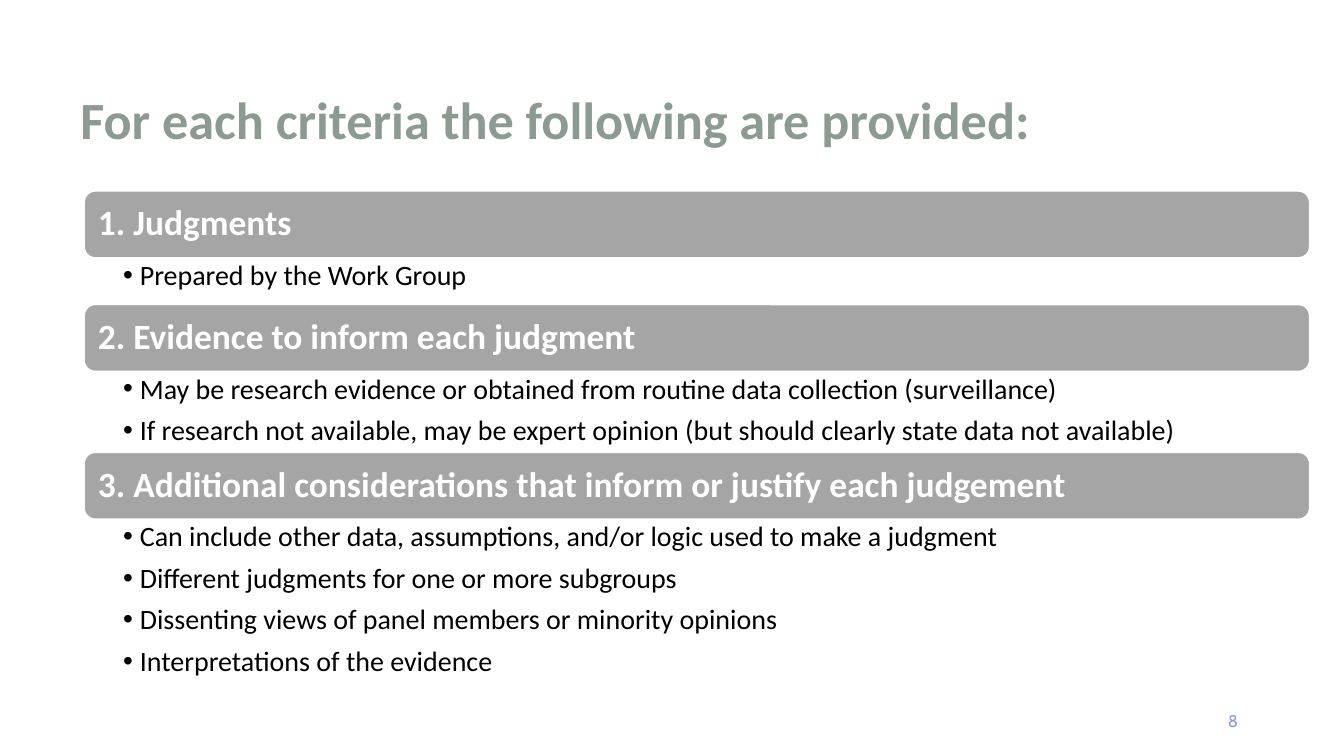
from lxml.etree import SubElement
from pptx import Presentation
from pptx.dml.color import RGBColor
from pptx.enum.shapes import MSO_SHAPE as Shape
from pptx.enum.text import MSO_ANCHOR as Anchor, PP_ALIGN as Align
from pptx.oxml.ns import qn
from pptx.util import Pt

SCALE = 4572
WHITE = RGBColor(0xFF, 0xFF, 0xFF)
BLACK = RGBColor(0, 0, 0)
GRAY = RGBColor(0xA5, 0xA5, 0xA5)
SAGE = RGBColor(0x8B, 0x9B, 0x92)
LILAC = RGBColor(0x8C, 0x9A, 0xE5)

BAR = 100
PARTS = [
    ("1. Judgments", 69, ["Prepared by the Work Group"]),
    ("2. Evidence to inform each judgment", 120, [
        "May be research evidence or obtained from routine data collection (surveillance)",
        "If research not available, may be expert opinion (but should clearly state data not available)",
    ]),
    ("3. Additional considerations that inform or justify each judgement", 246, [
        "Can include other data, assumptions, and/or logic used to make a judgment",
        "Different judgments for one or more subgroups",
        "Dissenting views of panel members or minority opinions",
        "Interpretations of the evidence",
    ]),
]


def px(n):
    return n * SCALE


def frame(shape, anchor, pads=(20, 10, 20, 10)):
    text = shape.text_frame
    text.word_wrap = True
    text.vertical_anchor = anchor
    text.margin_left, text.margin_top, text.margin_right, text.margin_bottom = map(px, pads)
    return text


def textbox(slide, box, anchor, pads=(20, 10, 20, 10)):
    return frame(slide.shapes.add_textbox(*map(px, box)), anchor, pads)


def write(para, words, size, color, bold=False, face="Calibri"):
    run = para.add_run()
    run.text = words
    font = run.font
    font.name, font.size, font.bold = face, Pt(size), bold
    font.color.rgb = color


def space(para):
    para.line_spacing = 0.9
    para.space_after = Pt(6)


def bullet(para):
    props = para._p.get_or_add_pPr()
    props.set("marL", str(px(25)))
    props.set("indent", str(px(-25)))
    SubElement(props, qn("a:buFont")).set("typeface", "Arial")
    SubElement(props, qn("a:buChar")).set("char", "•")


def add_title(slide, box):
    para = textbox(slide, box, Anchor.BOTTOM).paragraphs[0]
    para.line_spacing = Pt(30)
    write(para, "For each criteria the following are provided:", 28, SAGE, True)


def add_bar(slide, box, words):
    bar = slide.shapes.add_shape(Shape.ROUNDED_RECTANGLE, *map(px, box))
    bar.shadow.inherit = False
    bar.fill.solid()
    bar.fill.fore_color.rgb = GRAY
    bar.line.color.rgb = WHITE
    bar.line.width = Pt(1)
    para = frame(bar, Anchor.MIDDLE, (16, 16, 16, 16)).paragraphs[0]
    para.alignment = Align.LEFT
    space(para)
    write(para, words, 19, WHITE, True)


def add_points(slide, box, points):
    text = textbox(slide, box, Anchor.TOP, (58, 5, 30, 5))
    for i, point in enumerate(points):
        para = text.add_paragraph() if i else text.paragraphs[0]
        para.level = 1
        space(para)
        bullet(para)
        write(para, point, 15, BLACK)


def add_list(slide, left, top, width):
    for head, high, points in PARTS:
        add_bar(slide, (left, top, width, BAR), head)
        add_points(slide, (left, top + BAR, width, high), points)
        top += BAR + high


def add_number(slide, box):
    para = textbox(slide, box, Anchor.MIDDLE).paragraphs[0]
    para.alignment = Align.RIGHT
    write(para, "8", 9, LILAC, face="Cabin")


def main():
    deck = Presentation()
    deck.slide_width, deck.slide_height = px(2000), px(1125)
    slide = deck.slides.add_slide(deck.slide_layouts[6])
    add_title(slide, (100, 45, 1800, 188))
    add_list(slide, 125, 284, 1824)
    add_number(slide, (1412, 1043, 450, 60))
    deck.save("out.pptx")


if __name__ == "__main__":
    main()
